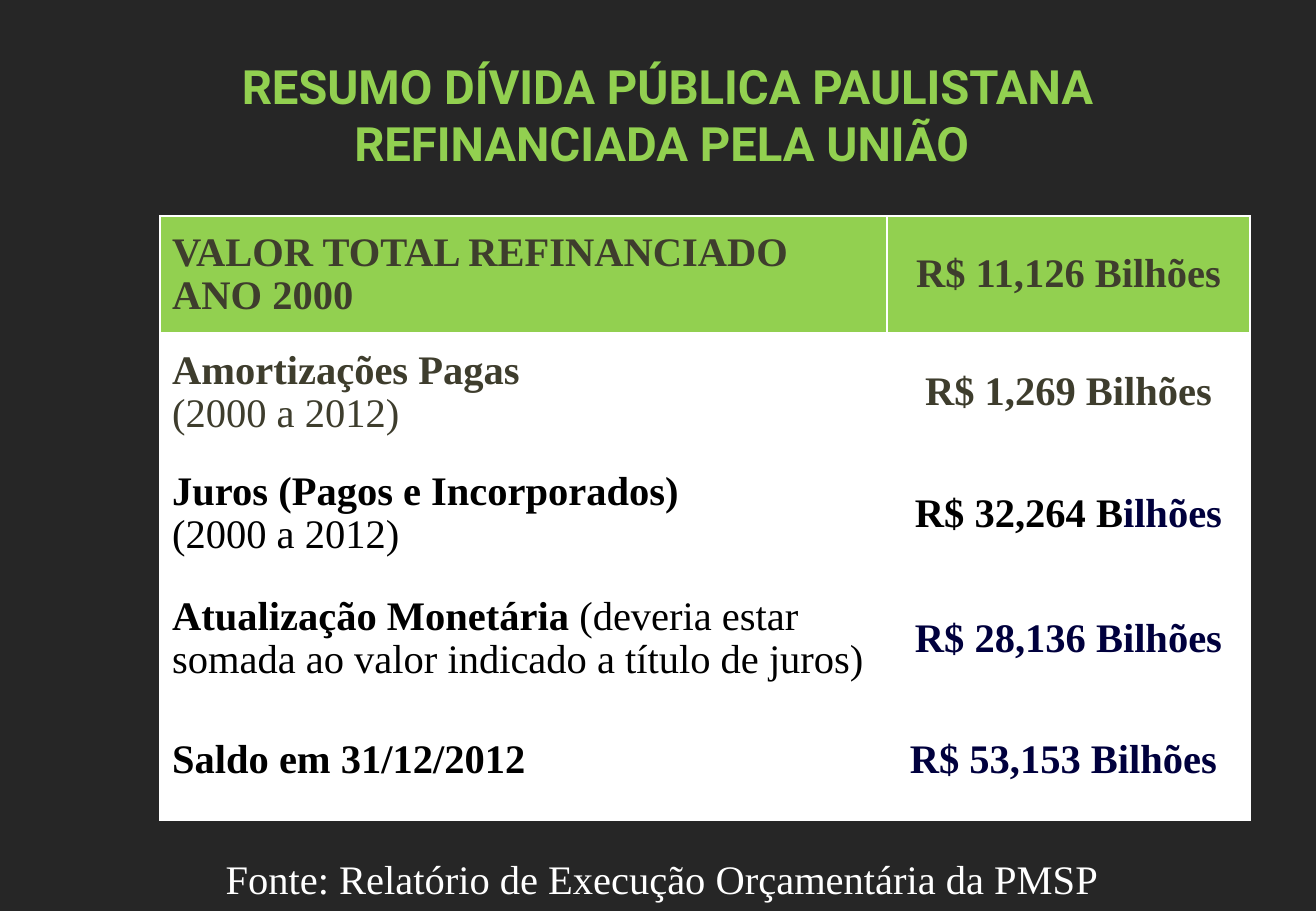
from lxml import etree
from pptx import Presentation
from pptx.dml.color import RGBColor
from pptx.enum.text import MSO_ANCHOR, MSO_AUTO_SIZE, PP_ALIGN
from pptx.oxml.ns import qn
from pptx.util import Pt

EMU_PER_PX = 7526
LEFT, CENTER = PP_ALIGN.LEFT, PP_ALIGN.CENTER
MIDDLE = MSO_ANCHOR.MIDDLE
NO_AUTOFIT = MSO_AUTO_SIZE.NONE

SERIF = "Times New Roman"
GREEN, WHITE, BLACK = "92D050", "FFFFFF", "000000"
CHARCOAL, OLIVE, NAVY = "262626", "3E3D2D", "00003D"

COLUMN_WIDTHS = (727, 363)
ROW_HEIGHTS = (118, 118, 125, 125, 118)

# Each cell is a list of paragraphs; each paragraph a list of (text, bold, colour).
DEBT_ROWS = [
    ([[("VALOR TOTAL REFINANCIADO ANO 2000", True, OLIVE)]],
     [[("R$ 11,126 Bilhões", True, OLIVE)]]),
    ([[("Amortizações Pagas", True, OLIVE)], [("(2000 a 2012)", False, OLIVE)]],
     [[("R$ 1,269 Bilhões", True, OLIVE)]]),
    ([[("Juros (Pagos e Incorporados)", True, BLACK)], [("(2000 a 2012)", False, BLACK)]],
     [[("R$ 32,264 B", True, BLACK), ("ilhões", True, NAVY)]]),
    ([[("Atualização Monetária ", True, BLACK),
       ("(deveria estar somada ao valor indicado a título de juros)", False, BLACK)]],
     [[("R$ 28,136 Bilhões", True, NAVY)]]),
    ([[("Saldo em 31/12/2012", True, BLACK)]],
     [[("R$ 53,153 Bilhões ", True, NAVY)]]),
]


def px(length):
    return round(length * EMU_PER_PX)


def rgb(color):
    return RGBColor.from_string(color)


def style_paragraph(paragraph, font_name, size, align):
    paragraph.alignment = align
    paragraph.font.name = font_name
    paragraph.font.size = Pt(size)


def add_title(slide, text):
    title = slide.shapes.title
    title.left, title.top, title.width, title.height = px(74), px(51), px(1187), px(126)
    frame = title.text_frame
    frame.text = text
    frame.auto_size = NO_AUTOFIT
    frame.vertical_anchor = MIDDLE
    paragraph = frame.paragraphs[0]
    style_paragraph(paragraph, "Roboto", 28, CENTER)
    paragraph.font.bold = True
    paragraph.font.color.rgb = rgb(GREEN)


def add_source_note(slide, text):
    note = slide.shapes.add_textbox(px(141), px(848), px(1042), px(61))
    frame = note.text_frame
    frame.word_wrap = True
    frame.text = text
    paragraph = frame.paragraphs[0]
    style_paragraph(paragraph, SERIF, 24, CENTER)
    paragraph.font.color.rgb = rgb(WHITE)


def set_borders(cell, bottom_width):
    properties = cell._tc.get_or_add_tcPr()
    widths = {"a:lnL": 1, "a:lnR": 1, "a:lnT": 1, "a:lnB": bottom_width}
    for position, (tag, width) in enumerate(widths.items()):
        line = etree.Element(qn(tag), w=str(Pt(width)))
        fill = etree.SubElement(line, qn("a:solidFill"))
        etree.SubElement(fill, qn("a:srgbClr"), val=WHITE)
        properties.insert(position, line)


def fill_cell(cell, paragraphs, align, is_header):
    cell.vertical_anchor = MIDDLE
    cell.fill.solid()
    cell.fill.fore_color.rgb = rgb(GREEN if is_header else WHITE)
    set_borders(cell, 3 if is_header else 1)
    frame = cell.text_frame
    for index, runs in enumerate(paragraphs):
        paragraph = frame.add_paragraph() if index else frame.paragraphs[0]
        style_paragraph(paragraph, SERIF, 24, align)
        paragraph.line_spacing = 0.96
        for text, bold, color in runs:
            run = paragraph.add_run()
            run.text = text
            run.font.bold = bold
            run.font.color.rgb = rgb(color)


def add_debt_table(slide):
    table = slide.shapes.add_table(
        len(ROW_HEIGHTS), len(COLUMN_WIDTHS), px(160), px(216),
        px(sum(COLUMN_WIDTHS)), px(sum(ROW_HEIGHTS))).table
    table.horz_banding = False
    for column, width in zip(table.columns, COLUMN_WIDTHS):
        column.width = px(width)
    for row_index, (row, height) in enumerate(zip(table.rows, ROW_HEIGHTS)):
        row.height = px(height)
        for cell, paragraphs, align in zip(row.cells, DEBT_ROWS[row_index], (LEFT, CENTER)):
            fill_cell(cell, paragraphs, align, row_index == 0)


def main():
    presentation = Presentation()
    presentation.slide_width, presentation.slide_height = px(1316), px(911)
    slide = presentation.slides.add_slide(presentation.slide_layouts.get_by_name("Title Only"))
    slide.background.fill.solid()
    slide.background.fill.fore_color.rgb = rgb(CHARCOAL)
    add_title(slide, "RESUMO DÍVIDA PÚBLICA PAULISTANA REFINANCIADA PELA UNIÃO ")
    add_source_note(slide, "Fonte: Relatório de Execução Orçamentária da PMSP")
    add_debt_table(slide)
    presentation.save("out.pptx")


if __name__ == "__main__":
    main()
